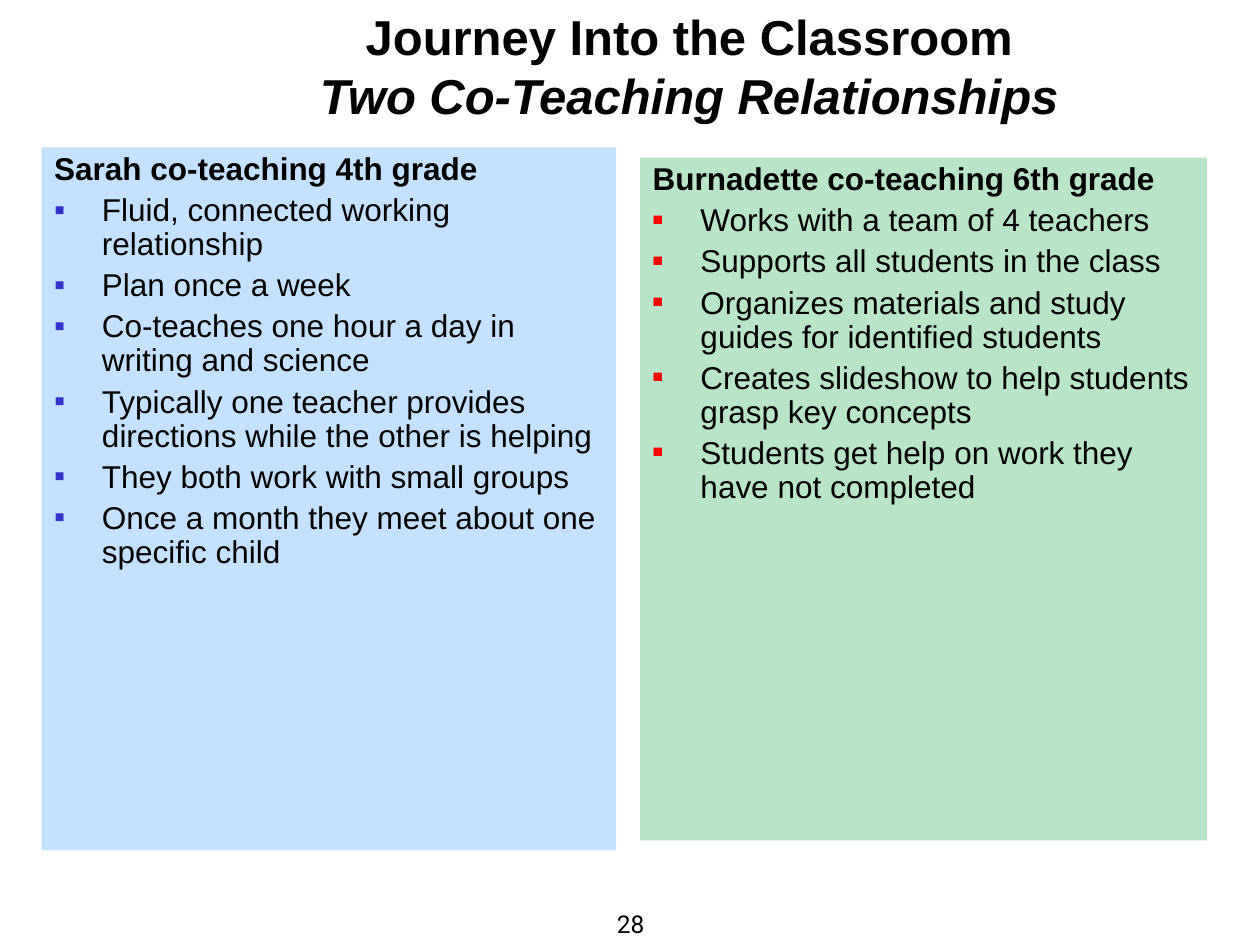
from dataclasses import dataclass

from lxml import etree
from pptx import Presentation
from pptx.dml.color import RGBColor
from pptx.enum import shapes, text
from pptx.oxml import ns
from pptx.util import Inches, Pt

BLACK = "000000"
PAD = 0.05
HANG = 0.38


@dataclass
class Bullet:
    char: str
    color: str
    size: int = 100


@dataclass
class Panel:
    left: float
    top: float
    width: float
    height: float
    fill: str
    depth: float
    bullet: Bullet
    head: str
    items: list[str]


PANELS = [
    Panel(0.33, 1.17, 4.56, 5.58, "C4E2FF", 3.38, Bullet("▪", "3333CC"),
          "Sarah co-teaching 4th grade", [
              "Fluid, connected working relationship",
              "Plan once a week",
              "Co-teaches one hour a day in writing and science",
              "Typically one teacher provides directions while the other is helping",
              "They both work with small groups",
              "Once a month they meet about one specific child",
          ]),
    Panel(5.08, 1.25, 4.5, 5.42, "B8E4C7", 2.79, Bullet("■", "FF0000", 55),
          "Burnadette co-teaching 6th grade", [
              "Works with a team of 4 teachers",
              "Supports all students in the class",
              "Organizes materials and study guides for identified students",
              "Creates slideshow to help students grasp key concepts",
              "Students get help on work they have not completed",
          ]),
]


def paint(color, code: str) -> None:
    color.rgb = RGBColor.from_string(code)


def add_box(tree, left: float, top: float, width: float, height: float,
            wrap: bool = True):
    """Add a text box with even padding and return its text frame."""
    box = tree.add_textbox(*map(Inches, (left, top, width, height)))
    frame = box.text_frame
    frame.word_wrap = wrap
    frame.margin_left = frame.margin_right = Inches(PAD)
    frame.margin_top = frame.margin_bottom = Inches(PAD)
    return frame


def add_run(para, words: str, size: int, name: str = "Arial",
            bold: bool = False, italic: bool = False) -> None:
    run = para.add_run()
    run.text = words
    font = run.font
    font.name, font.size = name, Pt(size)
    font.bold, font.italic = bold, italic
    paint(font.color, BLACK)


def set_bullet(para, bullet: Bullet) -> None:
    props = para._p.get_or_add_pPr()
    tint = etree.SubElement(props, ns.qn("a:buClr"))
    etree.SubElement(tint, ns.qn("a:srgbClr"), val=bullet.color)
    etree.SubElement(props, ns.qn("a:buSzPct"), val=str(bullet.size * 1000))
    etree.SubElement(props, ns.qn("a:buFont"), typeface="Arial")
    etree.SubElement(props, ns.qn("a:buChar"), char=bullet.char)


def add_panel(slide, panel: Panel) -> None:
    group = slide.shapes.add_group_shape()
    rect = group.shapes.add_shape(
        shapes.MSO_SHAPE.RECTANGLE,
        *map(Inches, (panel.left, panel.top, panel.width, panel.height)))
    rect.shadow.inherit = False
    rect.fill.solid()
    paint(rect.fill.fore_color, panel.fill)
    rect.line.fill.background()

    frame = add_box(group.shapes, panel.left + PAD, panel.top,
                    panel.width - 2 * PAD, panel.depth)
    for i, words in enumerate([panel.head, *panel.items]):
        para = frame.add_paragraph() if i else frame.paragraphs[0]
        props = para._p.get_or_add_pPr()
        props.set("marL", str(Inches(HANG)))
        props.set("indent", str(-Inches(HANG)))
        if i:
            set_bullet(para, panel.bullet)
            para.space_before = Pt(4)
        para.line_spacing = 0.9
        add_run(para, words, 18, bold=not i)


def add_title(slide) -> None:
    frame = add_box(slide.shapes, 2.48, 0, 5.98, 0.98, wrap=False)
    lines = ["Journey Into the Classroom", "Two Co-Teaching Relationships"]
    for i, words in enumerate(lines):
        para = frame.add_paragraph() if i else frame.paragraphs[0]
        para.alignment = text.PP_ALIGN.CENTER
        add_run(para, words, 28, bold=True, italic=i == 1)


def add_number(slide) -> None:
    frame = add_box(slide.shapes, 4.84, 7.16, 0.33, 0.34, wrap=False)
    frame.vertical_anchor = text.MSO_ANCHOR.BOTTOM
    para = frame.paragraphs[0]
    para.alignment = text.PP_ALIGN.CENTER
    add_run(para, "28", 14, "Roboto")


def main() -> None:
    deck = Presentation()
    deck.slide_width, deck.slide_height = Inches(10), Inches(7.5)
    slide = deck.slides.add_slide(deck.slide_layouts[6])
    add_number(slide)
    add_title(slide)
    for panel in PANELS:
        add_panel(slide, panel)
    deck.save("out.pptx")


if __name__ == "__main__":
    main()
